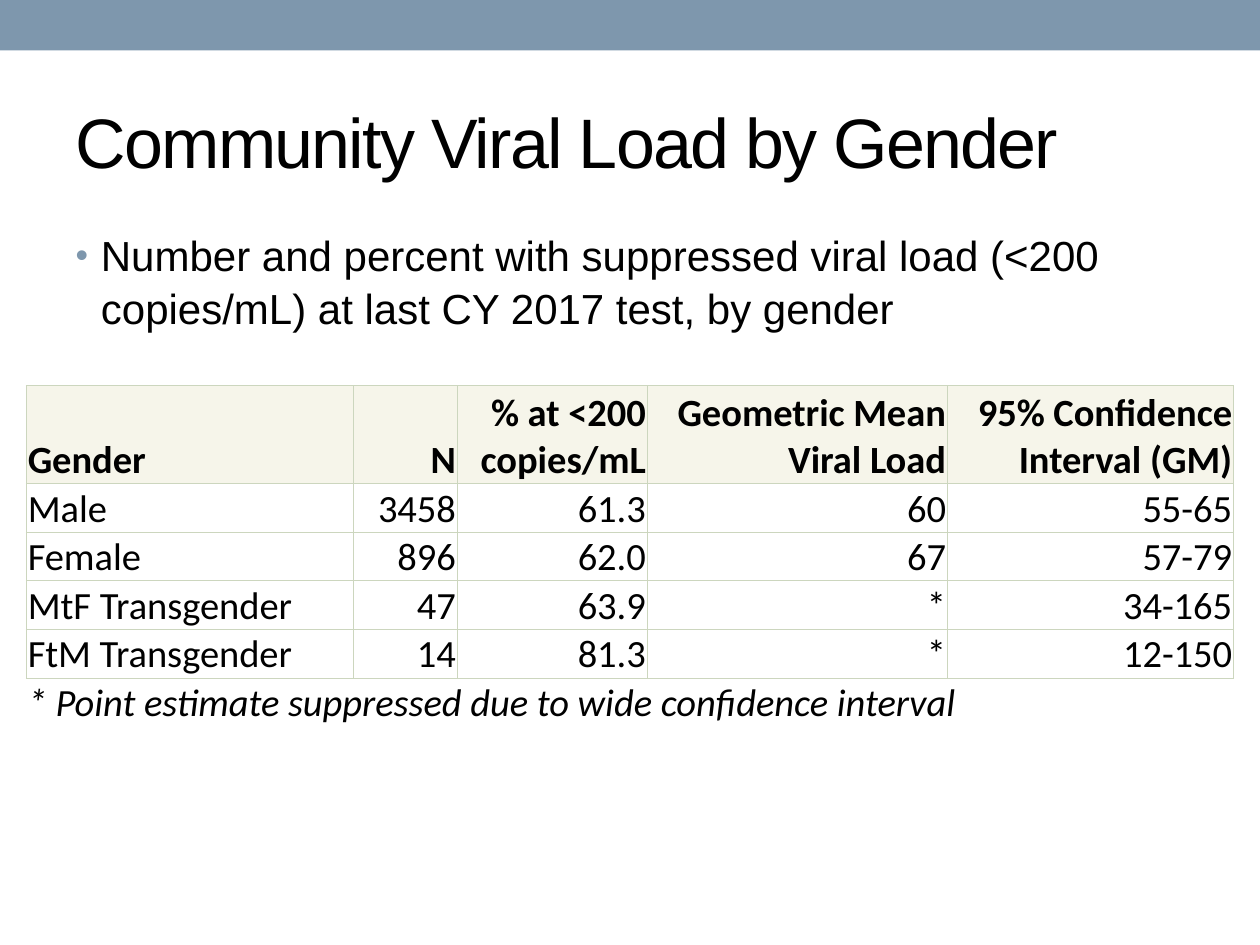
import pptx
import pptx.util
import pptx.dml.color
import pptx.enum.shapes
import pptx.enum.text
import pptx.oxml
import pptx.oxml.ns
import lxml.etree

Cm = pptx.util.Cm
Pt = pptx.util.Pt
ALIGN = pptx.enum.text.PP_ALIGN
ANCHOR = pptx.enum.text.MSO_ANCHOR

TITLE = "Community Viral Load by Gender"
SUMMARY = "Number and percent with suppressed viral load (<200 copies/mL) at last CY 2017 test, by gender"
HEADER = ["Gender", "N", "% at <200 copies/mL", "Geometric Mean Viral Load", "95% Confidence Interval (GM)"]
RESULTS = [
    ["Male", "3458", "61.3", "60", "55-65"],
    ["Female", "896", "62.0", "67", "57-79"],
    ["MtF Transgender", "47", "63.9", "*", "34-165"],
    ["FtM Transgender", "14", "81.3", "*", "12-150"],
]
FOOTNOTE = "* Point estimate suppressed due to wide confidence interval"
COLORS = {"accent": "7E97AD", "text": "000000", "header": "F6F5EA", "border": "CCD6BE"}
COLUMN_WIDTHS = [6.59, 2.1, 3.83, 6.05, 5.77]
HEADER_HEIGHT, ROW_HEIGHT = 1.98, 0.98
NO_STYLE = "{2D5ABB26-0587-4C30-8999-92F81FD0307C}"


def color(name):
    return pptx.dml.color.RGBColor.from_string(COLORS[name])


def place(shape, left, top, width, height):
    shape.left, shape.top, shape.width, shape.height = map(Cm, (left, top, width, height))


def write(frame, text, font, size, align=ALIGN.LEFT, bold=False, italic=False):
    frame.text = text
    para = frame.paragraphs[0]
    para.alignment = align
    span = para.runs[0]
    span.font.name, span.font.size = font, Pt(size)
    span.font.bold, span.font.italic = bold, italic
    span.font.color.rgb = color("text")
    return para


def add_xml(parent, xml):
    namespace = pptx.oxml.ns.nsdecls("a")
    parent.append(pptx.oxml.parse_xml(xml.replace("NS", namespace, 1)))


def add_bullet(para):
    properties = para._p.get_or_add_pPr()
    properties.set("marL", str(Cm(0.51)))
    properties.set("indent", str(-Cm(0.51)))
    add_xml(properties, f'<a:buClr NS><a:srgbClr val="{COLORS["accent"]}"/></a:buClr>')
    add_xml(properties, '<a:buSzPct NS val="85000"/>')
    add_xml(properties, '<a:buFont NS typeface="Arial"/>')
    add_xml(properties, '<a:buChar NS char="•"/>')


def fill_cell(cell, text, column, header=False, footnote=False):
    align = ALIGN.RIGHT if column else ALIGN.LEFT
    write(cell.text_frame, text, "Calibri", 22, align, header, footnote)
    cell.vertical_anchor = ANCHOR.BOTTOM
    cell.margin_left = cell.margin_top = cell.margin_right = Cm(0.03)
    cell.margin_bottom = 0
    properties = cell._tc.get_or_add_tcPr()
    for side in ["lnT"] if footnote else ["lnL", "lnR", "lnT", "lnB"]:
        add_xml(properties, f'<a:{side} NS w="{Pt(0.5)}"><a:solidFill>'
                            f'<a:srgbClr val="{COLORS["border"]}"/></a:solidFill></a:{side}>')
    if header:
        cell.fill.solid()
        cell.fill.fore_color.rgb = color("header")
    else:
        cell.fill.background()


def add_results(page):
    rows = [HEADER] + RESULTS
    height = HEADER_HEIGHT + ROW_HEIGHT * len(rows)
    frame = page.shapes.add_table(len(rows) + 1, len(HEADER), Cm(0.53), Cm(7.77),
                                  Cm(sum(COLUMN_WIDTHS)), Cm(height))
    table = frame.table
    table.first_row = table.horz_banding = False
    table._tbl.tblPr.find(pptx.oxml.ns.qn("a:tableStyleId")).text = NO_STYLE
    for column, width in zip(table.columns, COLUMN_WIDTHS):
        column.width = Cm(width)
    for index, row in enumerate(table.rows):
        row.height = Cm(ROW_HEIGHT if index else HEADER_HEIGHT)
    for index, values in enumerate(rows):
        for column, value in enumerate(values):
            fill_cell(table.cell(index, column), value, column, header=index == 0)
    last = len(rows)
    table.cell(last, 0).merge(table.cell(last, len(HEADER) - 1))
    fill_cell(table.cell(last, 0), FOOTNOTE, 0, footnote=True)


def main():
    deck = pptx.Presentation()
    deck.slide_width, deck.slide_height = Cm(25.4), Cm(19.05)
    page = deck.slides.add_slide(deck.slide_layouts[1])

    band = page.shapes.add_shape(pptx.enum.shapes.MSO_SHAPE.RECTANGLE, 0, 0, deck.slide_width, Cm(1.02))
    band.shadow.inherit = False
    band.fill.solid()
    band.fill.fore_color.rgb = color("accent")
    band.line.fill.background()

    title = page.shapes.title
    place(title, 1.27, 1.47, 22.86, 2.74)
    title.text_frame.vertical_anchor = ANCHOR.MIDDLE
    heading = write(title.text_frame, TITLE, "Arial", 40)
    heading.runs[0].font._element.set("spc", "-100")

    body = page.placeholders[1]
    place(body, 1.27, 4.45, 22.86, 2.97)
    summary = write(body.text_frame, SUMMARY, "Arial", 24)
    summary.line_spacing = 1.05
    summary.space_before = summary.space_after = Pt(3)
    add_bullet(summary)

    add_results(page)
    deck.save("out.pptx")


if __name__ == "__main__":
    main()
